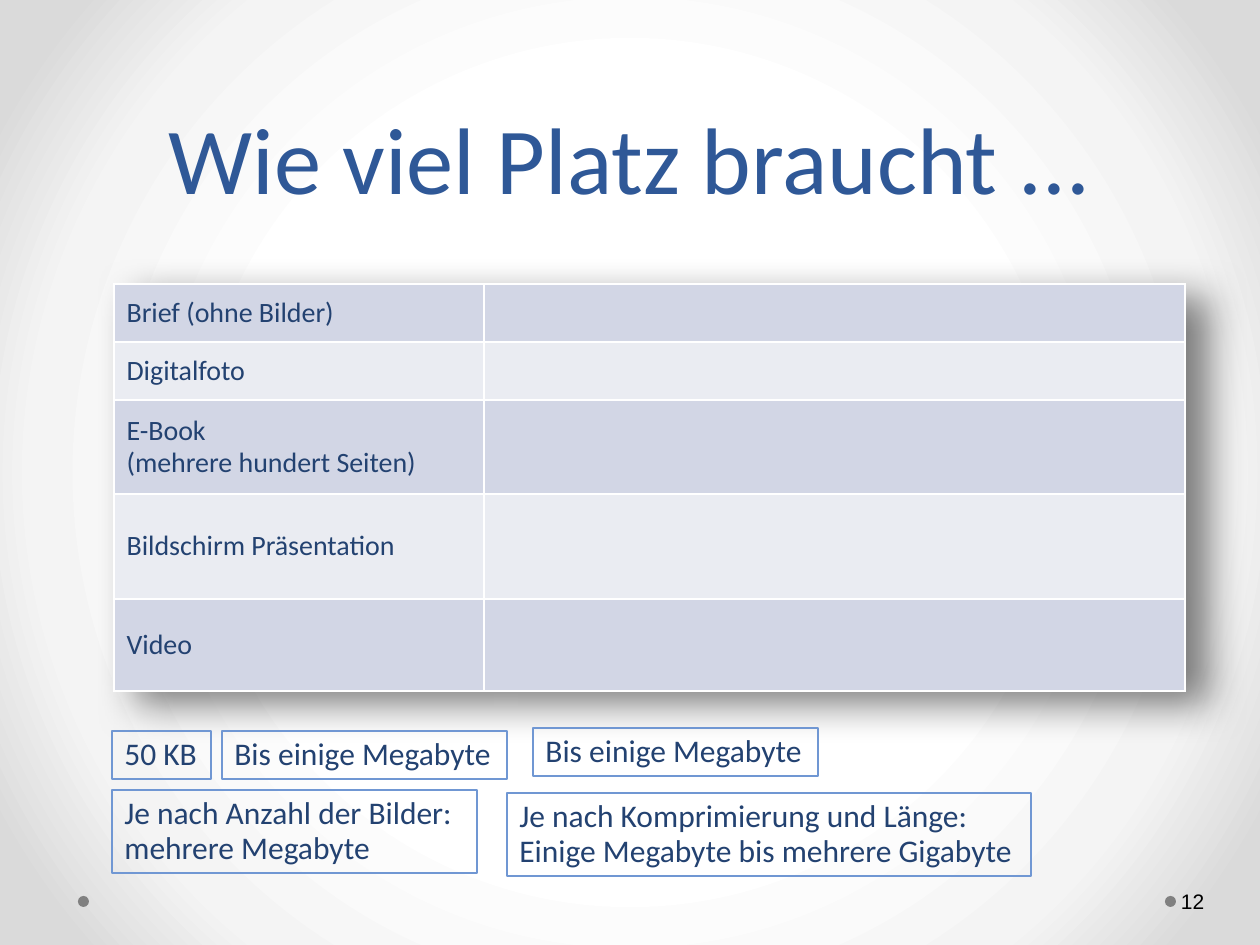
from lxml.etree import SubElement
from pptx import Presentation
from pptx.dml.color import RGBColor
from pptx.enum.shapes import MSO_SHAPE
from pptx.enum.text import MSO_ANCHOR, MSO_AUTO_SIZE, PP_ALIGN
from pptx.oxml import parse_xml
from pptx.oxml.ns import nsdecls, qn
from pptx.util import Pt

PX = 914400 / 126
COLORS = {
    "title": "2F5897", "text": "234271", "number": "000000", "dot": "808080",
    "outline": "7097D3", "border": "FFFFFF", "dark_row": "D2D6E5", "light_row": "EAECF2",
}
BACKDROP = [(50, "FFFFFF"), (76, "F4F4F4"), (92, "DADADA")]
TITLE = "Wie viel Platz braucht ..."
PAGE_NUMBER = "12"
FILES = [
    ("Brief (ohne Bilder)", 58),
    ("Digitalfoto", 58),
    ("E-Book \v(mehrere hundert Seiten)", 94),
    ("Bildschirm Präsentation", 105),
    ("Video", 92),
]
COLUMN_WIDTHS = [370, 701]
ANSWERS = [
    ("50 KB", 112, 731, 99, 48),
    ("Bis einige Megabyte", 222, 731, 285, 48),
    ("Je nach Anzahl der Bilder: \vmehrere Megabyte", 112, 790, 365, 83),
    ("Je nach Komprimierung und Länge: \vEinige Megabyte bis mehrere Gigabyte", 507, 793, 524, 83),
    ("Bis einige Megabyte", 533, 728, 285, 48),
]
DOT_LEFTS = [1165, 78]


def px(*lengths):
    return [round(length * PX) for length in lengths]


def rgb(name):
    return RGBColor.from_string(COLORS[name])


def write(frame, text, size, color, font="Calibri", spacing=None, align=PP_ALIGN.LEFT):
    paragraph = frame.paragraphs[0]
    paragraph.text = text
    paragraph.alignment = align
    paragraph.line_spacing = spacing
    for run in paragraph.runs:
        run.font.size = Pt(size)
        run.font.name = font
        run.font.color.rgb = rgb(color)


def paint_background(slide):
    slide.background.fill.gradient()
    gradient = slide.element.find(".//" + qn("a:gradFill"))
    for child in list(gradient):
        gradient.remove(child)
    stops = SubElement(gradient, qn("a:gsLst"))
    for position, color in BACKDROP:
        stop = SubElement(stops, qn("a:gs"), pos=str(position * 1000))
        SubElement(stop, qn("a:srgbClr"), val=color)
    circle = SubElement(gradient, qn("a:path"), path="circle")
    SubElement(circle, qn("a:fillToRect"), l="50000", t="50000", r="50000", b="50000")


def add_dots(slide):
    for left in DOT_LEFTS:
        dot = slide.shapes.add_shape(MSO_SHAPE.OVAL, *px(left, 896, 11, 11))
        dot.shadow.inherit = False
        dot.fill.solid()
        dot.fill.fore_color.rgb = rgb("dot")
        dot.line.fill.background()


def add_label(slide, box, anchor):
    frame = slide.shapes.add_textbox(*px(*box)).text_frame
    frame.word_wrap = True
    frame.vertical_anchor = anchor
    return frame


def add_borders(cell):
    properties = cell._tc.get_or_add_tcPr()
    for index, side in enumerate(("lnL", "lnR", "lnT", "lnB")):
        properties.insert(index, parse_xml(
            f'<a:{side} {nsdecls("a")} w="12700"><a:solidFill>'
            f'<a:srgbClr val="{COLORS["border"]}"/></a:solidFill></a:{side}>'))


def add_file_table(slide):
    heights = [height for _, height in FILES]
    box = px(114, 284, sum(COLUMN_WIDTHS), sum(heights))
    table = slide.shapes.add_table(len(FILES), len(COLUMN_WIDTHS), *box).table
    table.first_row = False
    table._tbl.tblPr.insert(0, parse_xml(
        f'<a:effectLst {nsdecls("a")}><a:outerShdw blurRad="292100" dist="190500" dir="1800000">'
        '<a:srgbClr val="000000"><a:alpha val="50000"/></a:srgbClr></a:outerShdw></a:effectLst>'))
    for column, width in zip(table.columns, px(*COLUMN_WIDTHS)):
        column.width = width
    for index, (row, height) in enumerate(zip(table.rows, px(*heights))):
        row.height = height
        for cell in row.cells:
            cell.fill.solid()
            cell.fill.fore_color.rgb = rgb("light_row" if index % 2 else "dark_row")
            cell.vertical_anchor = MSO_ANCHOR.MIDDLE
            add_borders(cell)
        write(row.cells[0].text_frame, FILES[index][0], 16, "text", spacing=0.93)


def add_answers(slide):
    for text, *box in ANSWERS:
        answer = slide.shapes.add_shape(MSO_SHAPE.RECTANGLE, *px(*box))
        answer.shadow.inherit = False
        answer.fill.background()
        answer.line.color.rgb = rgb("outline")
        answer.line.width = Pt(0.75)
        frame = answer.text_frame
        frame.word_wrap = False
        frame.auto_size = MSO_AUTO_SIZE.SHAPE_TO_FIT_TEXT
        frame.vertical_anchor = MSO_ANCHOR.TOP
        write(frame, text, 18, "text", spacing=0.93)


def main():
    presentation = Presentation()
    presentation.slide_width, presentation.slide_height = px(1260, 945)
    slide = presentation.slides.add_slide(presentation.slide_layouts[6])
    paint_background(slide)
    add_dots(slide)
    title = add_label(slide, (63, 0, 1134, 220), MSO_ANCHOR.BOTTOM)
    write(title, TITLE, 54, "title", align=PP_ALIGN.CENTER)
    number = add_label(slide, (1177, 876, 77, 50), MSO_ANCHOR.MIDDLE)
    number.margin_left, number.margin_right = px(4, 6)
    write(number, PAGE_NUMBER, 12, "number", font="Arial")
    add_file_table(slide)
    add_answers(slide)
    presentation.save("out.pptx")


if __name__ == "__main__":
    main()
